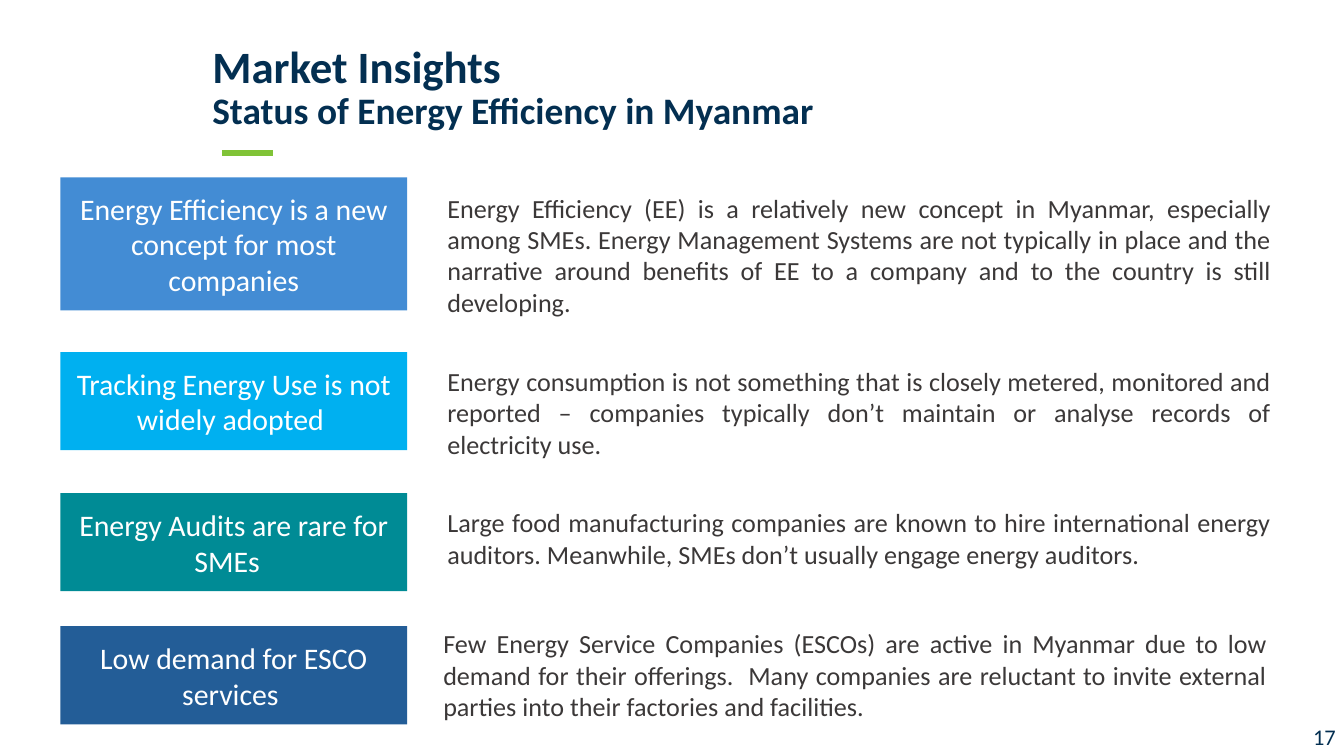
"""Build the Market Insights slide on energy efficiency in Myanmar."""
from lxml import etree
from pptx import Presentation
from pptx.dml.color import RGBColor
from pptx.enum.shapes import MSO_CONNECTOR, MSO_SHAPE
from pptx.enum.text import MSO_ANCHOR, MSO_AUTO_SIZE, PP_ALIGN
from pptx.oxml.ns import qn
from pptx.util import Inches, Pt

STRAIGHT = MSO_CONNECTOR.STRAIGHT
RECTANGLE = MSO_SHAPE.RECTANGLE
MIDDLE, BOTTOM = MSO_ANCHOR.MIDDLE, MSO_ANCHOR.BOTTOM
CENTER, JUSTIFY, LEFT = PP_ALIGN.CENTER, PP_ALIGN.JUSTIFY, PP_ALIGN.LEFT
NO_FIT, GROW = MSO_AUTO_SIZE.NONE, MSO_AUTO_SIZE.SHAPE_TO_FIT_TEXT

NAVY = RGBColor(0x03, 0x2F, 0x51)
GREEN = RGBColor(0x80, 0xC3, 0x37)
WHITE = RGBColor(0xFF, 0xFF, 0xFF)
CHARCOAL = RGBColor(0x3B, 0x38, 0x38)
BLUE = RGBColor(0x43, 0x8C, 0xD4)
SKY = RGBColor(0x00, 0xB0, 0xF0)
TEAL = RGBColor(0x00, 0x8B, 0x95)
DEEP_BLUE = RGBColor(0x23, 0x5D, 0x97)

INSIGHTS = [
    (BLUE, 1.32, 0.99, "Energy Efficiency is a new concept for most companies",
     3.23, 1.38, 1.04,
     "Energy Efficiency (EE) is a relatively new concept in Myanmar, especially among SMEs. "
     "Energy Management Systems are not typically in place and the narrative around benefits "
     "of EE to a company and to the country is still developing."),
    (SKY, 2.62, 0.73, "Tracking Energy Use is not widely adopted ",
     3.23, 2.67, 0.81,
     "Energy consumption is not something that is closely metered, monitored and reported – "
     "companies typically don’t maintain or analyse records of electricity use. "),
    (TEAL, 3.67, 0.73, "Energy Audits are rare for SMEs  ",
     3.23, 3.72, 0.57,
     "Large food manufacturing companies are known to hire international energy auditors. "
     "Meanwhile, SMEs don’t usually engage energy auditors."),
    (DEEP_BLUE, 4.66, 0.73, "Low demand for ESCO services ",
     3.2, 4.62, 0.81,
     "Few Energy Service Companies (ESCOs) are active in Myanmar due to low demand for their "
     "offerings.  Many companies are reluctant to invite external parties into their factories "
     "and facilities. "),
]


def write(box, text, size, color, align, bold=False):
    box.text_frame.word_wrap = True
    para = box.text_frame.paragraphs[0]
    para.text = text
    para.alignment = align
    for span in para.runs:
        span.font.name = "Calibri"
        span.font.size = Pt(size)
        span.font.bold = bold
        span.font.color.rgb = color


def clear_margins(frame):
    frame.margin_left = frame.margin_right = frame.margin_top = frame.margin_bottom = 0


deck = Presentation()
deck.slide_width = Inches(10)
deck.slide_height = deck.slide_width * 9 // 16
page = deck.slides.add_slide(deck.slide_layouts[5])

title = page.shapes.title
title.left, title.top = Inches(1.58), Inches(0.29)
title.width, title.height = Inches(8.03), Inches(0.7)
clear_margins(title.text_frame)
title.text_frame.auto_size = NO_FIT
title.text_frame.vertical_anchor = BOTTOM
write(title, "Market Insights \vStatus of Energy Efficiency in Myanmar", 24, NAVY, LEFT, True)
heading = title.text_frame.paragraphs[0]
heading.line_spacing = 0.9
heading.runs[1].font.size = Pt(20)

accent = page.shapes.add_connector(
    STRAIGHT, Inches(1.65), Inches(1.14), Inches(2.03), Inches(1.14))
accent.line.color.rgb = GREEN
accent.line.width = Pt(3)
etree.SubElement(accent.element.spPr, qn("a:effectLst"))

for fill, top, height, label, text_left, text_top, text_height, text in INSIGHTS:
    card = page.shapes.add_shape(
        RECTANGLE, Inches(0.45), Inches(top), Inches(2.58), Inches(height))
    card.shadow.inherit = False
    card.fill.solid()
    card.fill.fore_color.rgb = fill
    card.line.fill.background()
    card.text_frame.vertical_anchor = MIDDLE
    write(card, label, 16, WHITE, CENTER)

    detail = page.shapes.add_textbox(
        Inches(text_left), Inches(text_top), Inches(6.33), Inches(text_height))
    detail.text_frame.auto_size = GROW
    write(detail, text, 14, CHARCOAL, JUSTIFY)

page_number = page.shapes.add_textbox(Inches(9.71), Inches(5.33), Inches(0.29), Inches(0.3))
clear_margins(page_number.text_frame)
page_number.text_frame.vertical_anchor = MIDDLE
write(page_number, "17", 12, NAVY, CENTER)

deck.save("out.pptx")
